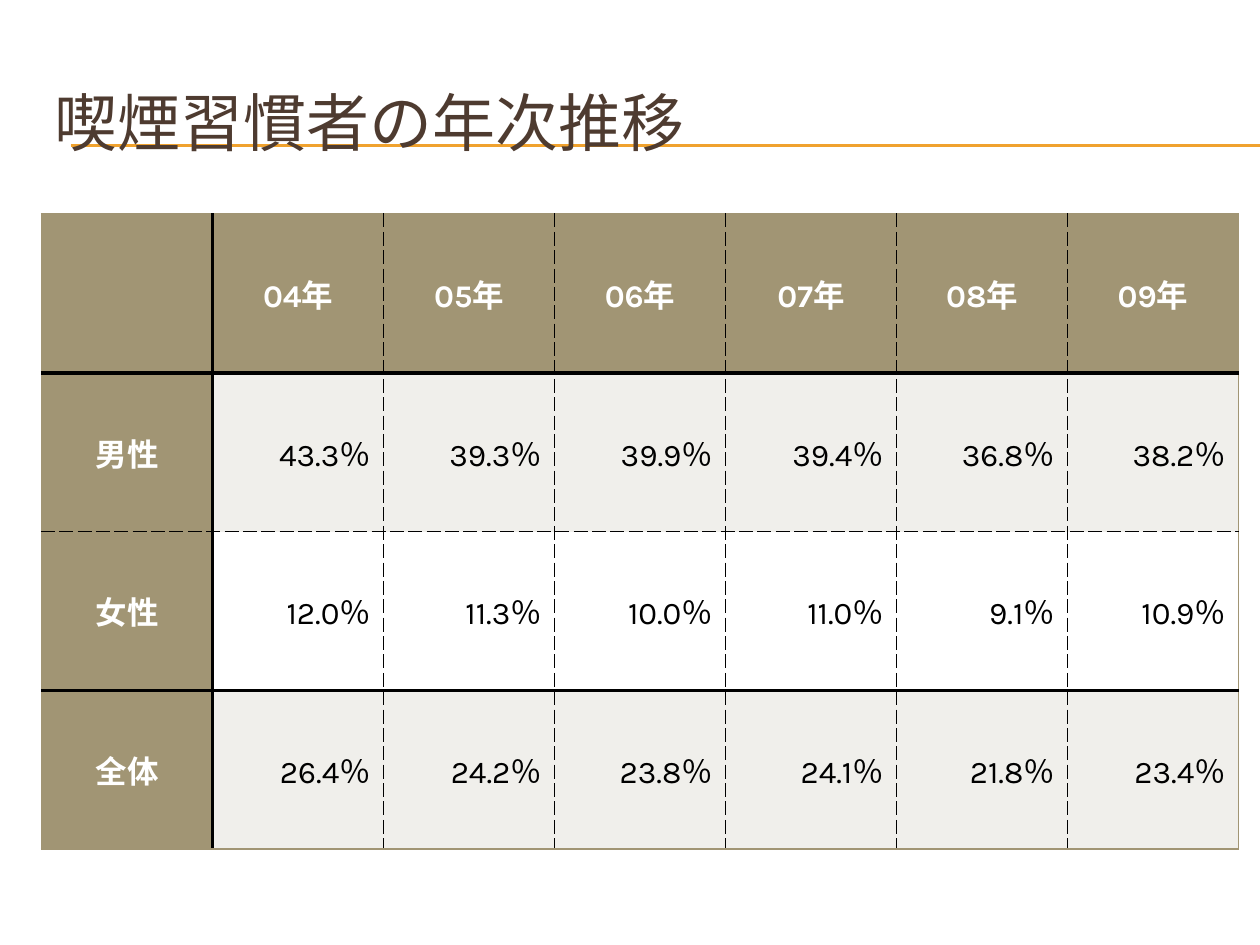
from dataclasses import dataclass

from lxml import etree
from pptx import Presentation
from pptx.dml.color import RGBColor
from pptx.enum.shapes import MSO_CONNECTOR
from pptx.enum.text import MSO_ANCHOR, PP_ALIGN
from pptx.oxml.ns import qn
from pptx.util import Inches, Pt

STRAIGHT = MSO_CONNECTOR.STRAIGHT
MIDDLE = MSO_ANCHOR.MIDDLE
LEFT, CENTER, RIGHT = PP_ALIGN.LEFT, PP_ALIGN.CENTER, PP_ALIGN.RIGHT

FONT = "Karla"
COLORS = {
    "title": "4E3B30",
    "rule": "F0A22E",
    "header": "A19574",
    "band": "F0EFEB",
    "white": "FFFFFF",
    "black": "000000",
}


@dataclass(frozen=True)
class Border:
    color: str
    width: float
    dash: str = "solid"


OUTER = Border("header", 1)
THICK = Border("black", 2.25)
DASHED = Border("black", 1, "dash")

# Table content: smoking rate in percent by group and year
YEARS = ["04", "05", "06", "07", "08", "09"]
RATES = {
    "男性": [43.3, 39.3, 39.9, 39.4, 36.8, 38.2],
    "女性": [12.0, 11.3, 10.0, 11.0, 9.1, 10.9],
    "全体": [26.4, 24.2, 23.8, 24.1, 21.8, 23.4],
}
ROWS = [["", *(f"{year}年" for year in YEARS)]]
ROWS += [[group, *(f"{rate:.1f}％" for rate in rates)] for group, rates in RATES.items()]

# Grid lines, from the top edge down and from the left edge across
ROW_EDGES = [OUTER, THICK, DASHED, THICK, OUTER]
COLUMN_EDGES = [OUTER, THICK, *[DASHED] * (len(YEARS) - 1), OUTER]


def rgb(name: str) -> RGBColor:
    return RGBColor.from_string(COLORS[name])


def format_text(frame, size: float, color: str, bold: bool, align) -> None:
    for para in frame.paragraphs:
        para.alignment = align
        for span in para.runs:
            span.font.name = FONT
            span.font.size = Pt(size)
            span.font.bold = bold
            span.font.color.rgb = rgb(color)


def add_rule(page, top: float) -> None:
    rule = page.shapes.add_connector(
        STRAIGHT, Inches(0.56), Inches(top), Inches(10), Inches(top))
    rule.line.color.rgb = rgb("rule")
    rule.line.width = Pt(0.75)
    etree.SubElement(rule._element.spPr, qn("a:effectLst"))


def set_borders(cell, sides: dict[str, Border]) -> None:
    properties = cell._tc.get_or_add_tcPr()
    for position, (side, border) in enumerate(sides.items()):
        line = etree.Element(qn(f"a:ln{side}"), w=str(Pt(border.width)))
        fill = etree.SubElement(line, qn("a:solidFill"))
        etree.SubElement(fill, qn("a:srgbClr"), val=COLORS[border.color])
        etree.SubElement(line, qn("a:prstDash"), val=border.dash)
        properties.insert(position, line)


def fill_cell(cell, row: int, column: int) -> None:
    is_header = row == 0 or column == 0
    body_fill = "band" if row % 2 else "white"
    cell.text_frame.text = ROWS[row][column]
    cell.vertical_anchor = MIDDLE
    format_text(cell.text_frame, 18, "white" if is_header else "black",
                is_header, CENTER if is_header else RIGHT)
    cell.fill.solid()
    cell.fill.fore_color.rgb = rgb("header" if is_header else body_fill)
    set_borders(cell, {
        "L": COLUMN_EDGES[column], "R": COLUMN_EDGES[column + 1],
        "T": ROW_EDGES[row], "B": ROW_EDGES[row + 1],
    })


def add_rate_table(page) -> None:
    table = page.shapes.add_table(
        len(ROWS), len(ROWS[0]),
        Inches(0.33), Inches(1.7), Inches(9.5), Inches(5.04)).table
    for row, values in enumerate(ROWS):
        for column in range(len(values)):
            fill_cell(table.cell(row, column), row, column)


def add_title(page) -> None:
    title = page.shapes.title
    title.left, title.top = Inches(0.33), Inches(0.5)
    title.width, title.height = Inches(9.5), Inches(0.92)
    title.text_frame.text = "喫煙習慣者の年次推移"
    title.text_frame.vertical_anchor = MIDDLE
    format_text(title.text_frame, 36, "title", False, LEFT)
    # Bring the title in front of the rules
    page.shapes._spTree.append(title._element)


def main() -> None:
    deck = Presentation()
    deck.slide_width, deck.slide_height = Inches(10), Inches(7.5)
    page = deck.slides.add_slide(deck.slide_layouts[5])
    page.background.fill.solid()
    page.background.fill.fore_color.rgb = rgb("white")

    # Double rule behind the title
    for top in (1.15, 1.16):
        add_rule(page, top)
    add_title(page)
    add_rate_table(page)
    deck.save("out.pptx")


if __name__ == "__main__":
    main()
